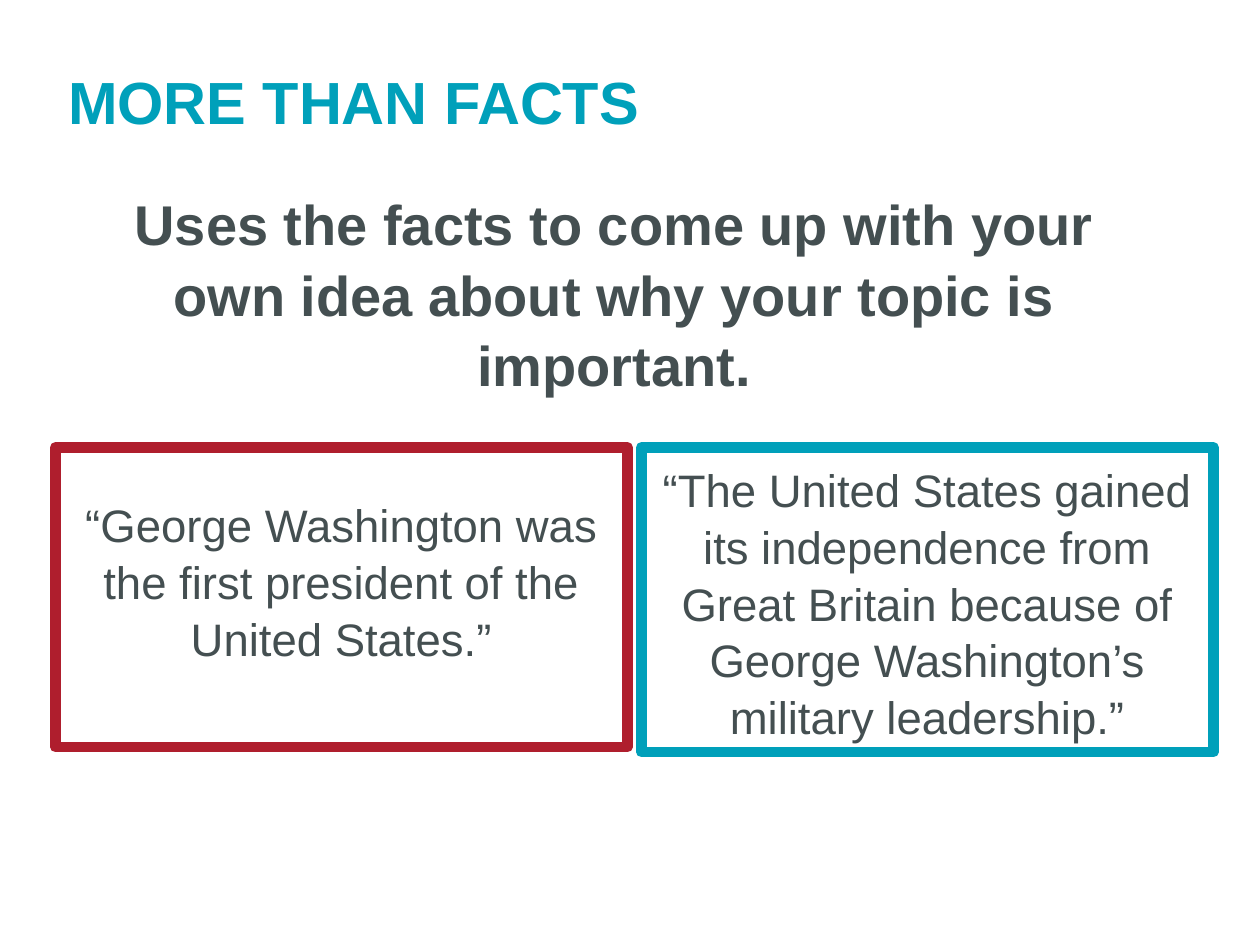
"""Build the "More than facts" slide with python-pptx."""
from pptx import Presentation
from pptx.dml.color import RGBColor
from pptx.enum.shapes import MSO_SHAPE as Shape
from pptx.enum.text import MSO_ANCHOR as Anchor, MSO_AUTO_SIZE as Fit, PP_ALIGN as Align
from pptx.oxml.ns import qn
from pptx.util import Inches, Pt

TEAL, RED, GRAY = "00A0BA", "AF1E2D", "444F51"
LEFT, COL_W, COL_STEP, ROW_Y = 0.44, 4.54, 4.65, 3.55
INSET = 0.1


def rgb(value):
    return RGBColor.from_string(value)


def place(sp, x, y, w, h):
    sp.left, sp.top, sp.width, sp.height = map(Inches, (x, y, w, h))


def write(sp, text, size, color, bold=False, align=Align.CENTER,
          anchor=Anchor.TOP, top=INSET, spacing=1.04):
    tf = sp.text_frame
    tf.word_wrap, tf.auto_size, tf.vertical_anchor = True, Fit.NONE, anchor
    tf.margin_left = tf.margin_right = tf.margin_bottom = Inches(INSET)
    tf.margin_top = Inches(top)
    p = tf.paragraphs[0]
    p.text, p.alignment = text, align
    p.line_spacing, p.space_before = spacing, Pt(0)
    p.font.name, p.font.size, p.font.bold = "Arial", Pt(size), bold
    p.font.color.rgb = rgb(color)
    return p


def remove_bullet(p):
    pPr = p._p.get_or_add_pPr()
    pPr.set("marL", "0")
    pPr.set("indent", "0")
    bullet = pPr.makeelement(qn("a:buNone"), {})
    pPr.insert_element_before(bullet, "a:tabLst", "a:defRPr", "a:extLst")


def add_quote(s, col, height, color, text, top):
    x = LEFT + col * COL_STEP
    sp = s.shapes.add_shape(Shape.RECTANGLE, *map(Inches, (x, ROW_Y, COL_W, height)))
    sp.shadow.inherit = False
    sp.fill.background()
    sp.line.color.rgb, sp.line.width = rgb(color), Pt(6)
    ln = sp.line._get_or_add_ln()
    ln.append(ln.makeelement(qn("a:round"), {}))
    write(sp, text, 26, GRAY, top=top)


def main():
    prs = Presentation()
    prs.slide_width, prs.slide_height = Inches(10), Inches(7.5)
    s = prs.slides.add_slide(prs.slide_layouts[1])
    title, body = s.placeholders

    place(title, LEFT, 0.43, 9.18, 0.74)
    write(title, "MORE THAN FACTS", 34, TEAL, bold=True, align=Align.LEFT,
          anchor=Anchor.MIDDLE, spacing=1.0)

    place(body, 0.64, 1.38, 8.47, 1.31)
    remove_bullet(write(body, "Uses the facts to come up with your own idea about "
                        "why your topic is important.", 32, GRAY, bold=True, spacing=1.05))

    quotes = [
        (2.38, RED, "“George Washington was the first president of the United States.”", 0.38),
        (2.42, TEAL, "“The United States gained its independence from Great Britain "
         "because of George Washington’s military leadership.”", INSET),
    ]
    for col, quote in enumerate(quotes):
        add_quote(s, col, *quote)

    prs.save("out.pptx")


if __name__ == "__main__":
    main()
